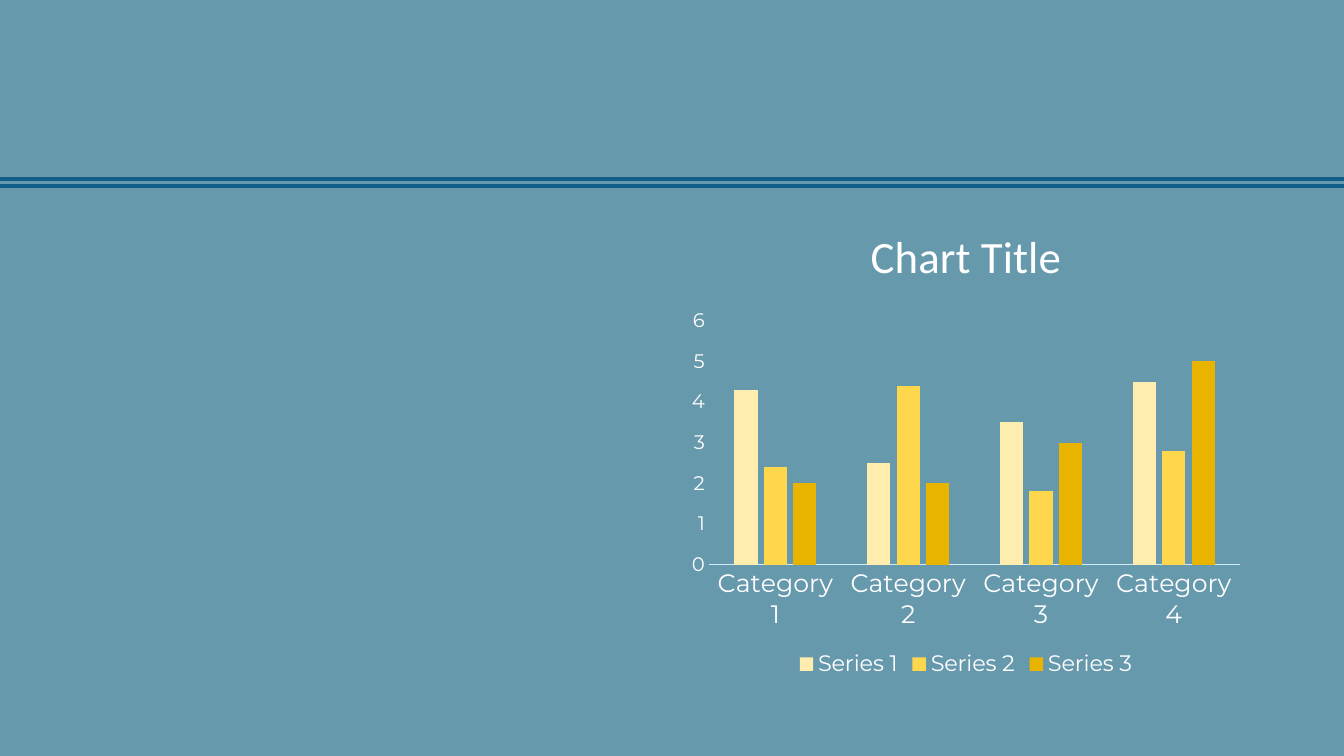
from lxml import etree
from pptx import Presentation
from pptx.chart.data import CategoryChartData
from pptx.dml.color import RGBColor
from pptx.enum.chart import XL_CHART_TYPE, XL_LEGEND_POSITION, XL_TICK_MARK
from pptx.enum.shapes import MSO_CONNECTOR
from pptx.oxml.ns import qn
from pptx.util import Pt

COLUMNS = XL_CHART_TYPE.COLUMN_CLUSTERED
LEGEND_BOTTOM = XL_LEGEND_POSITION.BOTTOM
NO_TICK = XL_TICK_MARK.NONE
STRAIGHT = MSO_CONNECTOR.STRAIGHT

BACKGROUND = RGBColor(0x67, 0x99, 0xAD)
RULE = RGBColor(0x11, 0x5F, 0x86)
AXIS = RGBColor(0xCF, 0xEB, 0xF9)
WHITE = RGBColor(0xFF, 0xFF, 0xFF)
PALE_YELLOW = RGBColor(0xFF, 0xED, 0xAF)
YELLOW = RGBColor(0xFF, 0xD7, 0x4D)
GOLD = RGBColor(0xE8, 0xB4, 0x00)

WIDTH, HEIGHT = 960, 540
CATEGORIES = [f"Category {number}" for number in range(1, 5)]
SERIES = [
    ("Series 1", (4.3, 2.5, 3.5, 4.5), PALE_YELLOW),
    ("Series 2", (2.4, 4.4, 1.8, 2.8), YELLOW),
    ("Series 3", (2, 2, 3, 5), GOLD),
]


class SlideBuilder:
    """Draws styled elements on the current slide, with lengths in points."""

    heading_font = "Calibri"
    body_font = "Montserrat"

    def __init__(self, slide):
        self.slide = slide

    def background(self, color):
        fill = self.slide.background.fill
        fill.solid()
        fill.fore_color.rgb = color

    def rule(self, top):
        line = self.slide.shapes.add_connector(STRAIGHT, 0, Pt(top), Pt(WIDTH), Pt(top))
        line.line.color.rgb = RULE
        line.line.width = Pt(3)
        etree.SubElement(line._element.spPr, qn("a:effectLst"))

    def style_font(self, font, name, size):
        font.name = name
        font.size = Pt(size)
        font.bold = False
        font.color.rgb = WHITE

    def style_axis(self, axis, size):
        axis.has_major_gridlines = False
        axis.major_tick_mark = axis.minor_tick_mark = NO_TICK
        self.style_font(axis.tick_labels.font, self.body_font, size)

    def column_chart(self, left, top, width, height, title):
        data = CategoryChartData()
        data.categories = CATEGORIES
        for name, values, _ in SERIES:
            data.add_series(name, values)
        chart = self.slide.shapes.add_chart(
            COLUMNS, Pt(left), Pt(top), Pt(width), Pt(height), data
        ).chart
        self.style_font(chart.font, self.heading_font, 10)

        chart.has_title = True
        title_frame = chart.chart_title.text_frame
        title_frame.text = title
        self.style_font(title_frame.paragraphs[0].font, self.heading_font, 32)
        chart.chart_title.include_in_layout = False

        chart.has_legend = True
        chart.legend.position = LEGEND_BOTTOM
        chart.legend.include_in_layout = False
        self.style_font(chart.legend.font, self.body_font, 16)

        self.style_axis(chart.category_axis, 18)
        chart.category_axis.format.line.color.rgb = AXIS
        chart.category_axis.format.line.width = Pt(0.75)
        self.style_axis(chart.value_axis, 14)
        chart.value_axis.format.line.fill.background()

        plot = chart.plots[0]
        plot.gap_width = 219
        plot.overlap = -27
        plot.vary_by_categories = False
        for series, (_, _, color) in zip(plot.series, SERIES):
            series.format.fill.solid()
            series.format.fill.fore_color.rgb = color


def main():
    presentation = Presentation()
    presentation.slide_width = Pt(WIDTH)
    presentation.slide_height = Pt(HEIGHT)
    builder = SlideBuilder(presentation.slides.add_slide(presentation.slide_layouts[6]))
    builder.background(BACKGROUND)
    for top in (133, 128):
        builder.rule(top)
    builder.column_chart(486, 144, 408, 343, "Chart Title")
    presentation.save("out.pptx")


if __name__ == "__main__":
    main()
